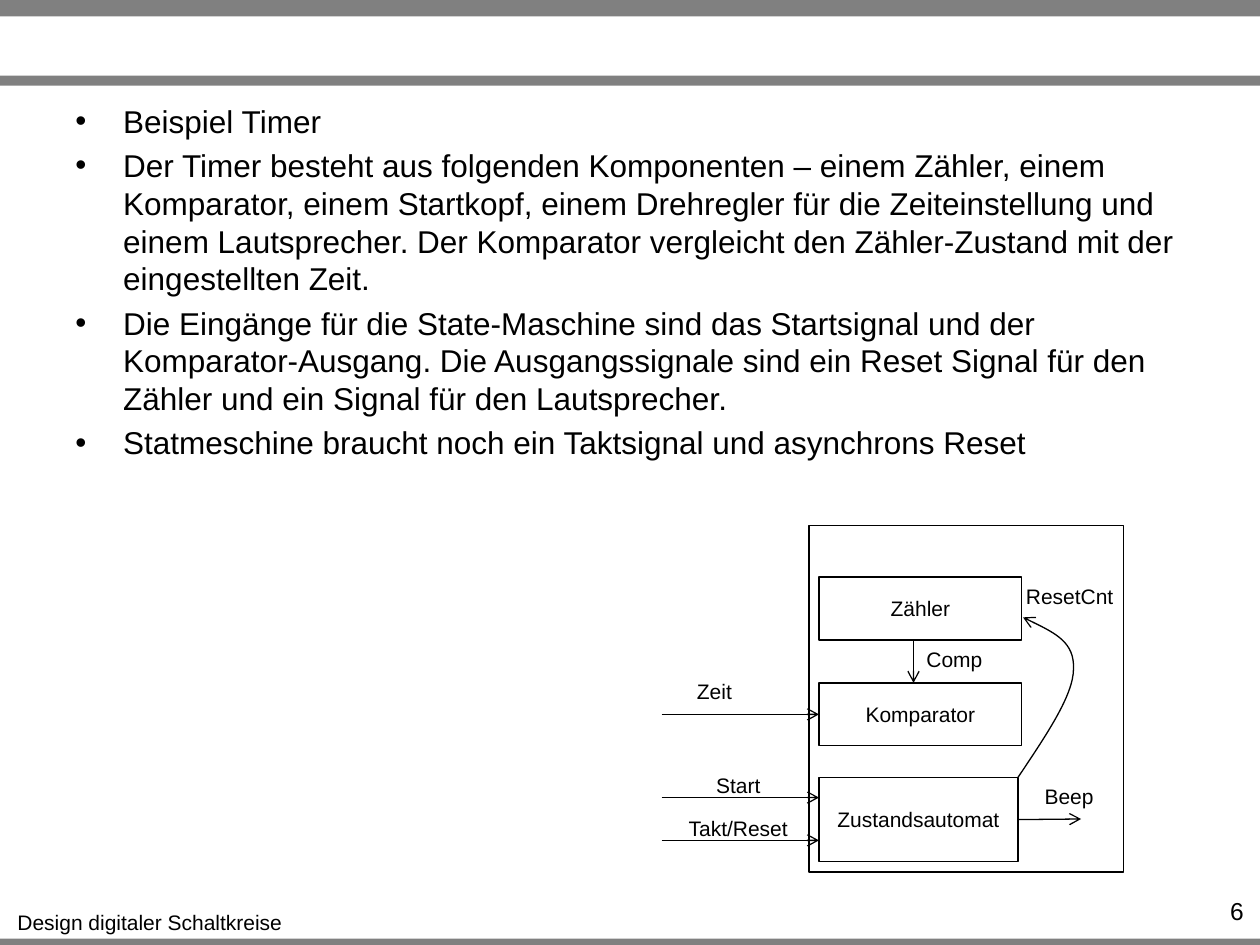
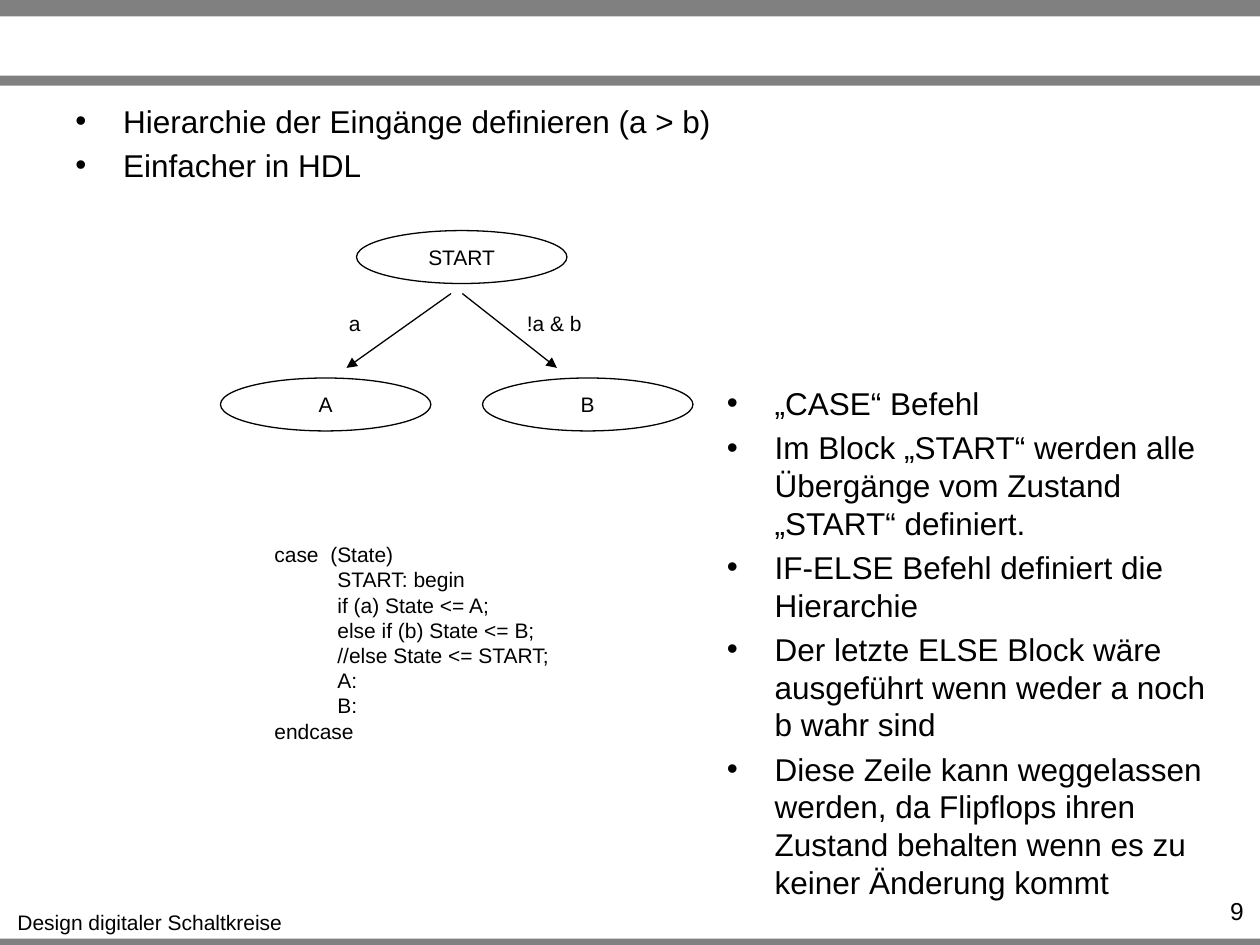
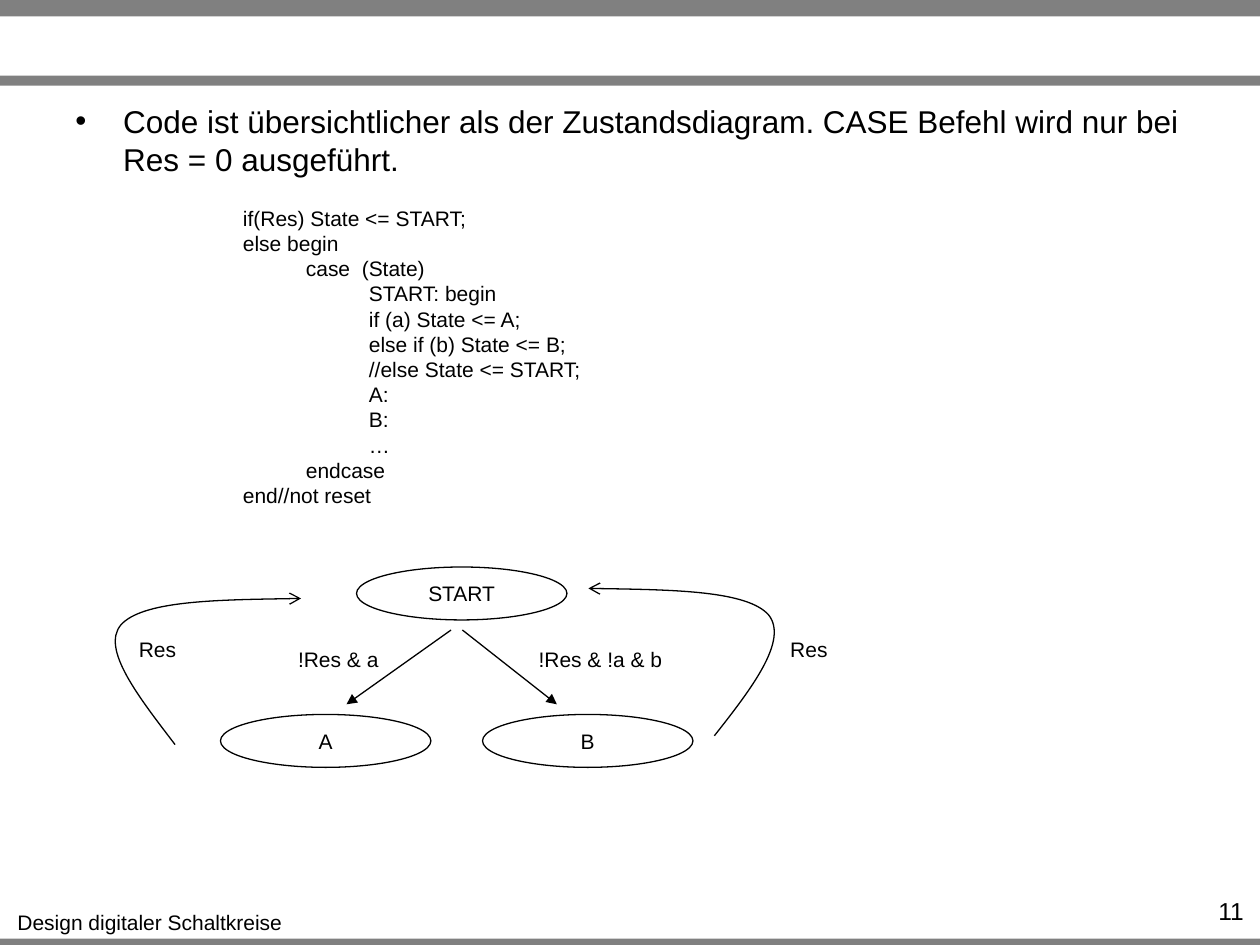
import pptx
import pptx.dml.color
import pptx.enum.shapes
import pptx.enum.text
import pptx.oxml
import pptx.oxml.ns
import pptx.util
from lxml import etree

Inches = pptx.util.Inches
Pt = pptx.util.Pt
SHAPE = pptx.enum.shapes.MSO_SHAPE
ALIGN = pptx.enum.text.PP_ALIGN
BLACK, GREY = "000000", "808080"
FONT = "Arial"
COURSE = "Design digitaler Schaltkreise"
BANDS = [(0, 0.13), (0.6, 0.08), (7.45, 0.08)]
HANGING = 0.38

TIMER_POINTS = [
    "Beispiel Timer",
    "Der Timer besteht aus folgenden Komponenten – einem Zähler, einem Komparator, einem Startkopf, "
    "einem Drehregler für die Zeiteinstellung und einem Lautsprecher. Der Komparator vergleicht den "
    "Zähler-Zustand mit der eingestellten Zeit.",
    "Die Eingänge für die State-Maschine sind das Startsignal und der Komparator-Ausgang. "
    "Die Ausgangssignale sind ein Reset Signal für den Zähler und ein Signal für den Lautsprecher.",
    "Statmeschine braucht noch ein Taktsignal und asynchrons Reset",
]
TIMER_FRAME = (6.42, 4.17, 2.5, 2.75)
TIMER_BLOCKS = {
    "Zustandsautomat": (6.5, 6.17, 1.58, 0.67),
    "Zähler": (6.5, 4.58, 1.61, 0.5),
    "Komparator": (6.5, 5.42, 1.61, 0.5),
}
TIMER_SIGNALS = [
    ("Start", (5.58, 6.08, 0.56), (5.25, 6.33), (6.5, 6.33), None, None),
    ("Zeit", (5.43, 5.34, 0.48), (5.25, 5.67), (6.5, 5.67), None, ("Komparator", 1)),
    ("Beep", (8.19, 6.17, 0.59), (8.08, 6.5), (8.58, 6.5), ("Zustandsautomat", 3), None),
    ("Takt/Reset", (5.36, 6.42, 1), (5.25, 6.67), (6.5, 6.67), None, None),
    ("Comp", (7.25, 5.08, 0.65), (7.25, 5.08), (7.25, 5.42), None, None),
]
RESET_COUNTER = ("ResetCnt", (8.04, 4.58, 0.9), (8.08, 6.17), [
    [(8.3, 5.84), (8.52, 5.52), (8.52, 5.31)],
    [(8.53, 5.1), (8.33, 5), (8.12, 4.9)],
])

HIERARCHY_POINTS = ["Hierarchie der Eingänge definieren (a > b)", "Einfacher in HDL"]
CASE_POINTS = [
    "„CASE“ Befehl",
    "Im Block „START“ werden alle Übergänge vom Zustand „START“ definiert.",
    "IF-ELSE Befehl definiert die Hierarchie",
    "Der letzte ELSE Block wäre ausgeführt wenn weder a noch b wahr sind",
    "Diese Zeile kann weggelassen werden, da Flipflops ihren Zustand behalten wenn es zu keiner "
    "Änderung kommt",
]
TRANSITIONS = [
    "START: begin",
    "if (a) State <= A;",
    "else if (b) State <= B;",
    "//else State <= START;",
    "A:",
    "B:",
]
CASE_CODE = [(2, "case  (State)"), *[(3, line) for line in TRANSITIONS], (2, "endcase")]
RESET_POINTS = [
    "Code ist übersichtlicher als der Zustandsdiagram. CASE Befehl wird nur bei Res = 0 ausgeführt.",
]
RESET_CODE = [
    (2, "if(Res) State <= START;"),
    (2, "else begin"),
    (3, "case  (State)"),
    *[(4, line) for line in TRANSITIONS + ["…"]],
    (3, "endcase"),
    (2, "end//not reset"),
]
STATES = {"START": (2.83, 0), "A": (1.75, 1.17), "B": (3.83, 1.17)}
STATE_SIZE = (1.67, 0.42)
STATE_ARROWS = [((3.58, 0.5), (2.75, 1.09)), ((3.67, 0.5), (4.42, 1.09))]
RESET_ARROWS = [
    ("Res", (6.17, 5, 0.5), (5.67, 5.84), [
        [(5.97, 5.46), (6.26, 5.08), (6.1, 4.88)],
        [(5.93, 4.69), (5.3, 4.68), (4.67, 4.67)],
    ]),
    ("Res", (1, 5, 0.5), (1.39, 5.91), [
        [(1.1, 5.53), (0.8, 5.15), (0.96, 4.96)],
        [(1.13, 4.77), (1.76, 4.76), (2.39, 4.75)],
    ]),
]


def rgb(color):
    return pptx.dml.color.RGBColor.from_string(color)


def add_element(parent, tag, **attributes):
    return etree.SubElement(parent, pptx.oxml.ns.qn(tag), attributes)


def write(paragraph, text, size, align=ALIGN.LEFT):
    paragraph.text = text
    paragraph.alignment = align
    paragraph.font.color.rgb = rgb(BLACK)
    for name, value in {"name": FONT, "size": Pt(size)}.items():
        setattr(paragraph.font, name, value)


def outline(shape, arrowhead=None):
    shape.line.color.rgb = rgb(BLACK)
    shape.line.width = Pt(0.75)
    if arrowhead:
        add_element(shape.line._get_or_add_ln(), "a:tailEnd", type=arrowhead)


def add_node(slide, kind, box, text=""):
    node = slide.shapes.add_shape(kind, *map(Inches, box))
    node.shadow.inherit = False
    node.fill.background()
    outline(node)
    if text:
        node.text_frame.vertical_anchor = pptx.enum.text.MSO_ANCHOR.MIDDLE
        write(node.text_frame.paragraphs[0], text, 12, ALIGN.CENTER)
    return node


def add_frame(slide, box, wrap=True, grow=False):
    frame = slide.shapes.add_textbox(*map(Inches, box)).text_frame
    frame.word_wrap = wrap
    if grow:
        frame.auto_size = pptx.enum.text.MSO_AUTO_SIZE.SHAPE_TO_FIT_TEXT
    return frame


def add_label(slide, text, place):
    frame = add_frame(slide, (*place, 0.3), wrap=False, grow=True)
    write(frame.paragraphs[0], text, 12, ALIGN.CENTER)


def add_paragraphs(frame, count):
    return [frame.paragraphs[0]] + [frame.add_paragraph() for _ in range(count - 1)]


def add_points(slide, points, box):
    paragraphs = add_paragraphs(add_frame(slide, box), len(points))
    for index, (paragraph, point) in enumerate(zip(paragraphs, points)):
        properties = paragraph._p.get_or_add_pPr()
        properties.set("marL", str(Inches(HANGING)))
        properties.set("indent", str(-Inches(HANGING)))
        add_element(properties, "a:buFont", typeface=FONT)
        add_element(properties, "a:buChar", char="•")
        if index:
            paragraph.space_before = Pt(3.6)
        write(paragraph, point, 18)


def add_code(slide, code, box):
    paragraphs = add_paragraphs(add_frame(slide, box, grow=True), len(code))
    for paragraph, (level, line) in zip(paragraphs, code):
        paragraph.level = level
        paragraph._p.get_or_add_pPr().set("marL", str(Inches(level * 0.5)))
        write(paragraph, line, 12)


def add_arrow(slide, start, end, arrowhead):
    arrow = slide.shapes.add_connector(
        pptx.enum.shapes.MSO_CONNECTOR.STRAIGHT, *map(Inches, start + end))
    outline(arrow, arrowhead)
    add_element(arrow._element.spPr, "a:effectLst")
    return arrow


def add_curve(slide, start, segments):
    builder = slide.shapes.build_freeform(*map(Inches, start))
    builder.add_line_segments([tuple(map(Inches, segment[-1])) for segment in segments], close=False)
    curve = builder.convert_to_shape()
    for straight, segment in zip(list(curve._element.iter(pptx.oxml.ns.qn("a:lnTo"))), segments):
        bend = etree.Element(pptx.oxml.ns.qn("a:cubicBezTo"))
        for x, y in segment:
            add_element(bend, "a:pt", x=str(Inches(x) - curve.left), y=str(Inches(y) - curve.top))
        straight.getparent().replace(straight, bend)
    curve.shadow.inherit = False
    curve.fill.background()
    outline(curve, "arrow")


def add_labelled_curve(slide, text, place, start, segments):
    add_curve(slide, start, segments)
    add_label(slide, text, place)


def add_state_diagram(slide, top, conditions):
    for state, (left, drop) in STATES.items():
        add_node(slide, SHAPE.OVAL, (left, top + drop, *STATE_SIZE), state)
    for (x1, y1), (x2, y2) in STATE_ARROWS:
        add_arrow(slide, (x1, top + y1), (x2, top + y2), "triangle")
    for condition, left, width in conditions:
        add_label(slide, condition, (left, top + 0.585, width))


def add_slide(deck, number, points, points_height):
    slide = deck.slides.add_slide(deck.slide_layouts[6])
    for top, height in BANDS:
        band = slide.shapes.add_shape(SHAPE.RECTANGLE, *map(Inches, (0, top, 10, height)))
        band.shadow.inherit = False
        band.fill.solid()
        band.fill.fore_color.rgb = rgb(GREY)
        band.line.fill.background()
    add_label(slide, COURSE, (0.03, 7.17, 2.32))
    add_points(slide, points, (0.5, 0.76, 9, points_height))
    page = add_frame(slide, (9.1, 7.06, 0.87, 0.24))
    write(page.paragraphs[0], str(number), 14, ALIGN.RIGHT)
    return slide


def add_timer_slide(deck):
    slide = add_slide(deck, 6, TIMER_POINTS, 1.99)
    add_node(slide, SHAPE.RECTANGLE, TIMER_FRAME)
    blocks = {name: add_node(slide, SHAPE.RECTANGLE, box, name) for name, box in TIMER_BLOCKS.items()}
    for signal, place, start, end, source, target in TIMER_SIGNALS:
        arrow = add_arrow(slide, start, end, "arrow")
        if source:
            arrow.begin_connect(blocks[source[0]], source[1])
        if target:
            arrow.end_connect(blocks[target[0]], target[1])
        add_label(slide, signal, place)
    add_labelled_curve(slide, *RESET_COUNTER)


def add_hierarchy_slide(deck):
    slide = add_slide(deck, 9, HIERARCHY_POINTS, 0.74)
    add_state_diagram(slide, 1.83, [("a", 2.67, 0.29), ("!a & b", 4.08, 0.64)])
    add_code(slide, CASE_CODE, (1.08, 4.25, 5, 1.72))
    add_points(slide, CASE_POINTS, (5.67, 3, 4, 2.17))


def add_reset_slide(deck):
    slide = add_slide(deck, 11, RESET_POINTS, 0.74)
    add_state_diagram(slide, 4.5, [("!Res & a", 2.26, 0.85), ("!Res & !a & b", 4.17, 1.19)])
    for reset_arrow in RESET_ARROWS:
        add_labelled_curve(slide, *reset_arrow)
    add_code(slide, RESET_CODE, (0.83, 1.58, 5, 2.52))


def main():
    deck = pptx.Presentation()
    deck.slide_width, deck.slide_height = Inches(10), Inches(7.5)
    add_timer_slide(deck)
    add_hierarchy_slide(deck)
    add_reset_slide(deck)
    deck.save("out.pptx")


if __name__ == "__main__":
    main()
